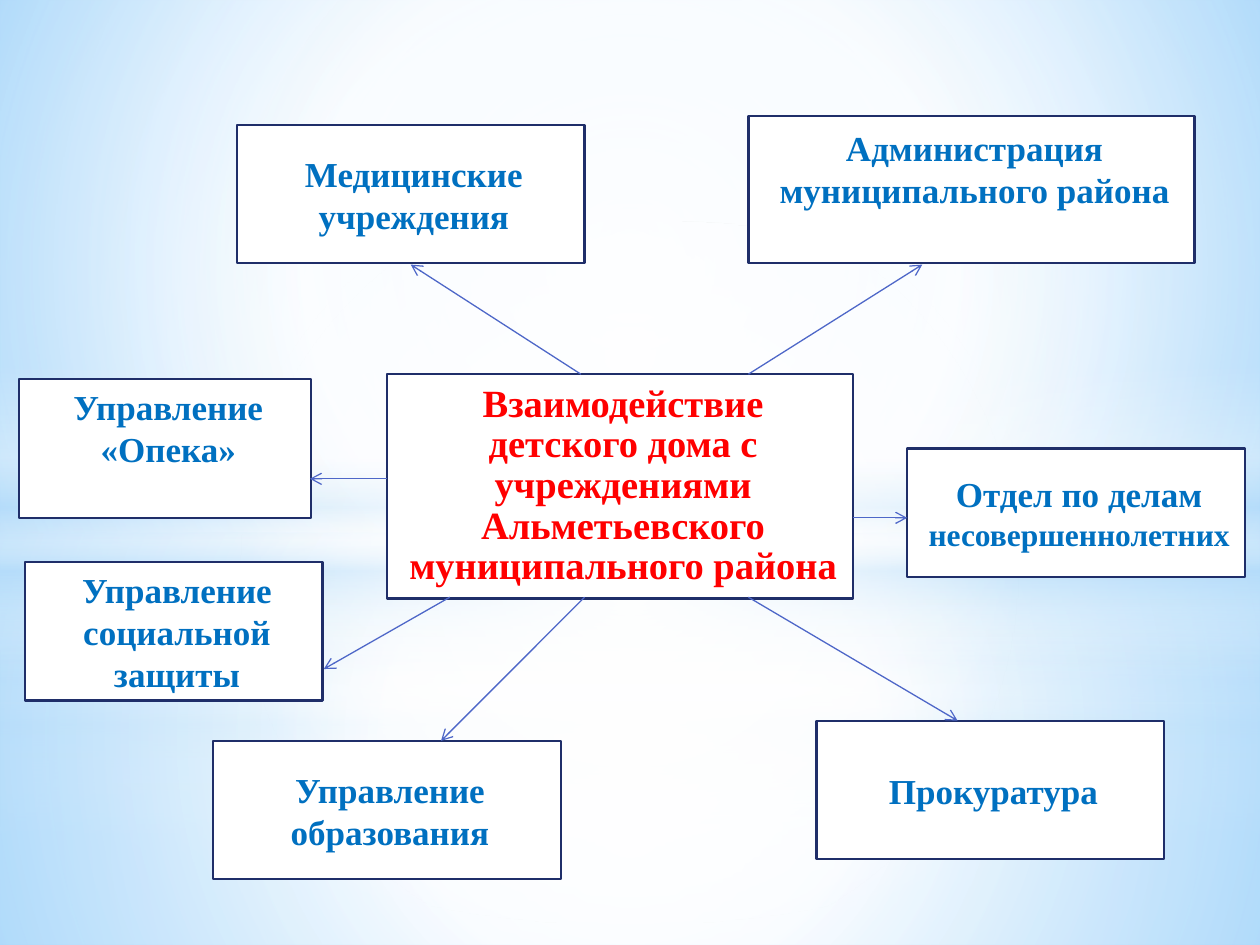
from pptx import Presentation
from pptx.dml.color import RGBColor
from pptx.enum.shapes import MSO_CONNECTOR, MSO_SHAPE
from pptx.enum.text import MSO_ANCHOR, PP_ALIGN
from pptx.oxml import parse_xml
from pptx.oxml.ns import nsdecls
from pptx.util import Inches, Pt
from lxml import etree

RECT, OVAL = MSO_SHAPE.RECTANGLE, MSO_SHAPE.OVAL
STRAIGHT = MSO_CONNECTOR.STRAIGHT
MIDDLE, CENTER = MSO_ANCHOR.MIDDLE, PP_ALIGN.CENTER

WHITE = RGBColor(0xFF, 0xFF, 0xFF)
PALE = RGBColor(0xB4, 0xDC, 0xFA)
SKY = RGBColor(0x9E, 0xD5, 0xFF)
DEEP_SKY = RGBColor(0x5B, 0xB9, 0xFF)
NAVY = RGBColor(0x1F, 0x2E, 0x69)
INDIGO = RGBColor(0x4E, 0x67, 0xC8)
BLUE = RGBColor(0x00, 0x70, 0xC0)
RED = RGBColor(0xFF, 0x00, 0x00)

FONT = "Times New Roman"
EMPTY_LINE = 0.33
MIDPOINT = (50, 50, 50, 50)


def glow(first, middle, last, position):
    return [(0, WHITE, first), (position, WHITE, middle), (100, PALE, last)]


def halo(edge):
    return [(0, WHITE, 100), (edge, WHITE, 0)]


BAND = [(0, WHITE, 0), (29, WHITE, 30), (45, PALE, 40),
        (55, WHITE, 26), (65, PALE, 60), (100, WHITE, 0)]

LAYERS = [
    (RECT, (0, 5.58, 10, 1.92), glow(91, 76, 79, 37), MIDPOINT),
    (RECT, (0, 0, 10, 5.58), glow(89, 62, 79, 48), MIDPOINT),
    (RECT, (0, 4.12, 10, 2.5), BAND, None),
    (OVAL, (0, 1.75, 10, 5.58), halo(56), MIDPOINT),
    (RECT, (0, 4.23, 10, 3.27), glow(92, 77, 80, 37), MIDPOINT),
    (RECT, (0, 0, 10, 4.23), glow(90, 63, 80, 48), MIDPOINT),
    (RECT, (0, 2.9, 10, 2.5), BAND, None),
    (OVAL, (0, 1.75, 10, 5.58), halo(54), MIDPOINT),
]

CENTRE_BOX = (3.07, 2.97, 3.7, 1.78)
CENTRE_TEXT = "Взаимодействие детского дома с учреждениями Альметьевского муниципального района"

PARTNERS = [
    ((0.15, 3.01, 2.32, 1.1), [("Управление «Опека»", 20)], EMPTY_LINE),
    ((0.2, 4.46, 2.36, 1.1), [("Управление социальной защиты", 20)], 0),
    ((5.94, 0.92, 3.54, 1.17),
     [("Администрация", 20), ("муниципального района", 20)], EMPTY_LINE),
    ((7.2, 3.56, 2.68, 1.02),
     [("Отдел по делам", 20), ("несовершеннолетних", 18)], 0),
    ((6.48, 5.72, 2.76, 1.1), [("Прокуратура", 20)], 0),
    ((1.69, 5.88, 2.76, 1.1), [("Управление образования", 20)], 0),
    ((1.88, 0.99, 2.76, 1.1), [("Медицинские учреждения", 20)], 0),
]

ARROWS = [
    ((3.07, 3.8), (2.46, 3.8)),
    ((4.64, 4.74), (3.5, 5.88)),
    ((5.94, 2.97), (7.32, 2.1)),
    ((4.61, 2.97), (3.26, 2.1)),
    ((5.94, 4.74), (7.6, 5.72)),
    ((3.57, 4.74), (2.57, 5.31)),
    ((6.77, 4.11), (7.2, 4.11)),
]


def set_gradient(fill, element, stops, focus):
    fill.gradient()
    old = element.xpath(".//a:gradFill")[0]
    stop_xml = "".join(
        f'<a:gs pos="{pos * 1000}"><a:srgbClr val="{color}">'
        f'<a:alpha val="{alpha * 1000}"/></a:srgbClr></a:gs>'
        for pos, color, alpha in stops)
    if focus:
        left, top, right, bottom = (v * 1000 for v in focus)
        direction = (f'<a:path path="circle"><a:fillToRect l="{left}" t="{top}" '
                     f'r="{right}" b="{bottom}"/></a:path>')
    else:
        direction = '<a:lin ang="5400000" scaled="0"/>'
    new = parse_xml(f'<a:gradFill {nsdecls("a")} rotWithShape="1">'
                    f'<a:gsLst>{stop_xml}</a:gsLst>{direction}</a:gradFill>')
    old.getparent().replace(old, new)


def add_backdrop(slide):
    set_gradient(slide.background.fill, slide.element,
                 [(0, SKY, 100), (60, WHITE, 100), (100, DEEP_SKY, 100)],
                 (20, 10, 20, 60))
    for kind, box, stops, focus in LAYERS:
        s = slide.shapes.add_shape(kind, *map(Inches, box))
        s.shadow.inherit = False
        s.line.fill.background()
        set_gradient(s.fill, s.element, stops, focus)


def add_box(slide, box, lines, color, space_below=0, line_spacing=1.0):
    s = slide.shapes.add_shape(RECT, *map(Inches, box))
    s.shadow.inherit = False
    s.fill.solid()
    s.fill.fore_color.rgb = WHITE
    s.line.color.rgb = NAVY
    s.line.width = Pt(1.25)
    tf = s.text_frame
    tf.word_wrap = True
    tf.vertical_anchor = MIDDLE
    tf.margin_bottom = Inches(0.05 + space_below)
    tf.text = "\n".join(text for text, size in lines)
    for p, (text, size) in zip(tf.paragraphs, lines):
        p.alignment = CENTER
        p.line_spacing = line_spacing
        p._p.get_or_add_pPr().set("marL", str(Inches(0.05)))
        font = p.runs[0].font
        font.name = FONT
        font.size = Pt(size)
        font.bold = True
        font.color.rgb = color


def add_arrow(slide, start, end):
    c = slide.shapes.add_connector(STRAIGHT, *map(Inches, start + end))
    c.line.color.rgb = INDIGO
    c.line.width = Pt(0.75)
    ln = c.line._get_or_add_ln()
    ln.append(parse_xml(f'<a:tailEnd {nsdecls("a")} type="arrow"/>'))
    etree.SubElement(ln.getparent(), ln.tag.replace("}ln", "}effectLst"))


def main():
    prs = Presentation()
    prs.slide_width, prs.slide_height = Inches(10), Inches(7.5)
    slide = prs.slides.add_slide(prs.slide_layouts[6])
    add_backdrop(slide)
    add_box(slide, CENTRE_BOX, [(CENTRE_TEXT, 22)], RED, line_spacing=0.88)
    for box, lines, space_below in PARTNERS:
        add_box(slide, box, lines, BLUE, space_below)
    for start, end in ARROWS:
        add_arrow(slide, start, end)
    prs.save("out.pptx")


if __name__ == "__main__":
    main()
